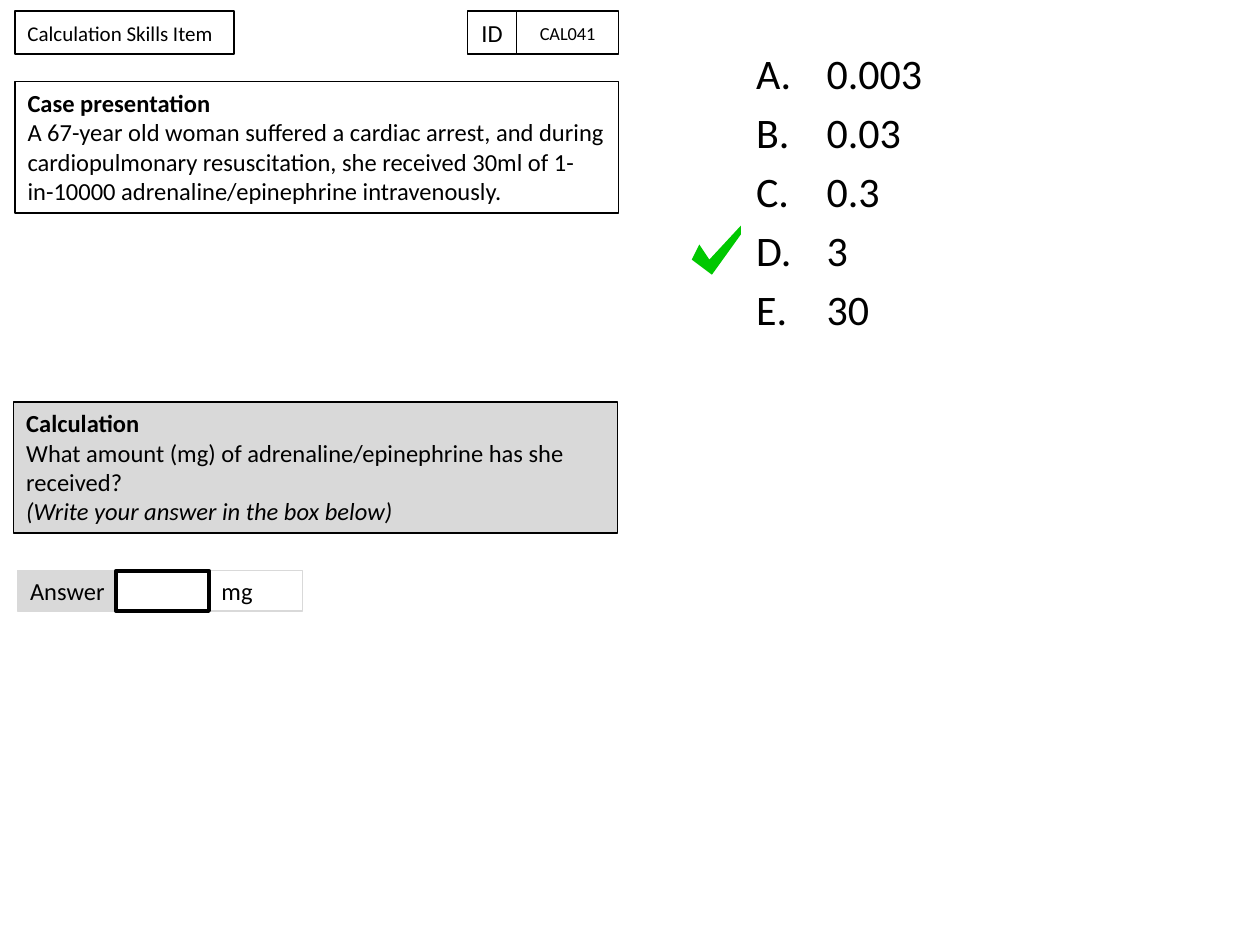
import pptx
import pptx.util
import pptx.dml.color
import pptx.enum.shapes
import pptx.enum.text
import lxml.etree

COLUMNS, ROWS = 100, 75
CELL = pptx.util.Inches(0.1)
BLACK, WHITE, GREY, GREEN = "000000", "FFFFFF", "D9D9D9", "00C800"
ALIGN = pptx.enum.text.PP_ALIGN
ANCHOR = pptx.enum.text.MSO_ANCHOR


def cells(*counts):
    return [round(count * CELL) for count in counts]


def color(code):
    return pptx.dml.color.RGBColor.from_string(code)


def write(paragraph, text, size=14, bold=False, italic=False, align=ALIGN.LEFT):
    paragraph.alignment = align
    run = paragraph.add_run()
    run.text = text
    run.font.name = "Calibri"
    run.font.size = pptx.util.Pt(size)
    run.font.bold = bold
    run.font.italic = italic
    run.font.color.rgb = color(BLACK)


def add_paragraph(frame, index):
    return frame.add_paragraph() if index else frame.paragraphs[0]


def paint(shape, fill):
    shape.shadow.inherit = False
    if fill:
        shape.fill.solid()
        shape.fill.fore_color.rgb = color(fill)
    else:
        shape.fill.background()


def add_box(slide, place, lines=(), fill=None, border=BLACK, weight=1,
            anchor=ANCHOR.MIDDLE, **text_format):
    box = slide.shapes.add_shape(
        pptx.enum.shapes.MSO_SHAPE.RECTANGLE, *cells(*place))
    paint(box, fill)
    box.line.color.rgb = color(border)
    box.line.width = pptx.util.Pt(weight)
    frame = box.text_frame
    frame.word_wrap = True
    frame.vertical_anchor = anchor
    for index, line in enumerate(lines):
        text, line_format = line if isinstance(line, tuple) else (line, {})
        write(add_paragraph(frame, index), text, **text_format, **line_format)


def add_options(slide, place, options):
    body = slide.placeholders[1]
    body.left, body.top, body.width, body.height = cells(*place)
    frame = body.text_frame
    frame.auto_size = pptx.enum.text.MSO_AUTO_SIZE.NONE
    for index, option in enumerate(options):
        paragraph = add_paragraph(frame, index)
        properties = paragraph._p.get_or_add_pPr()
        indent = cells(5.6)[0]
        properties.set("marL", str(indent))
        properties.set("indent", str(-indent))
        lxml.etree.SubElement(
            properties, pptx.oxml.ns.qn("a:buAutoNum"), type="alphaUcPeriod")
        if index == 0:
            paragraph.space_before = pptx.util.Pt(0)
        write(paragraph, option, size=24)


def add_tick(slide, corners):
    start, *others = [cells(*corner) for corner in corners]
    outline = slide.shapes.build_freeform(*start)
    outline.add_line_segments(others, close=True)
    tick = outline.convert_to_shape()
    paint(tick, GREEN)
    tick.line.fill.background()


def add_header(slide):
    top, height = 0.9, 3.4
    add_box(slide, (1.2, top, 17.4, height), ["Calculation Skills Item"],
            fill=WHITE, size=12)
    add_box(slide, (41, top, 8.1, height), ["CAL041"], fill=WHITE,
            size=10.5, align=ALIGN.CENTER)
    add_box(slide, (37.1, top, 3.9, height), ["ID"], align=ALIGN.CENTER)


def add_question(slide):
    width, height = 47.9, 10.4
    panel = {"weight": 0.75, "anchor": ANCHOR.TOP}
    add_box(slide, (1.2, 6.5, width, height), [
        ("Case presentation", {"bold": True}),
        "A 67-year old woman suffered a cardiac arrest, and during "
        "cardiopulmonary resuscitation, she received 30ml of "
        "1-in-10000 adrenaline/epinephrine intravenously.",
    ], **panel)
    add_box(slide, (1.1, 31.9, width, height), [
        ("Calculation", {"bold": True}),
        "What amount (mg) of adrenaline/epinephrine has she received?",
        ("(Write your answer in the box below)", {"italic": True}),
    ], fill=GREY, **panel)


def add_answer(slide):
    top, height, entry_left, entry_width = 45.3, 3.2, 9.2, 7.4
    add_box(slide, (1.4, top, 8.7, height), ["Answer"], fill=GREY,
            border=GREY, weight=0.75)
    add_box(slide, (entry_left + entry_width, top, entry_width, height),
            ["mg"], border=GREY, weight=0.75)
    add_box(slide, (entry_left, top, entry_width, height), fill=WHITE, weight=2)


def main():
    deck = pptx.Presentation()
    deck.slide_width, deck.slide_height = cells(COLUMNS, ROWS)
    slide = deck.slides.add_slide(deck.slide_layouts[1])
    title = slide.shapes.title.element
    title.getparent().remove(title)
    add_options(slide, (59, 3.3, 33.1, 64), ["0.003", "0.03", "0.3", "3", "30"])
    add_header(slide)
    add_question(slide)
    add_answer(slide)
    add_tick(slide, [(55.5, 19.4), (54.9, 20.6), (56.5, 21.8),
                     (58.8, 18.6), (58.8, 17.9), (56.3, 20.6)])
    deck.save("out.pptx")


if __name__ == "__main__":
    main()
